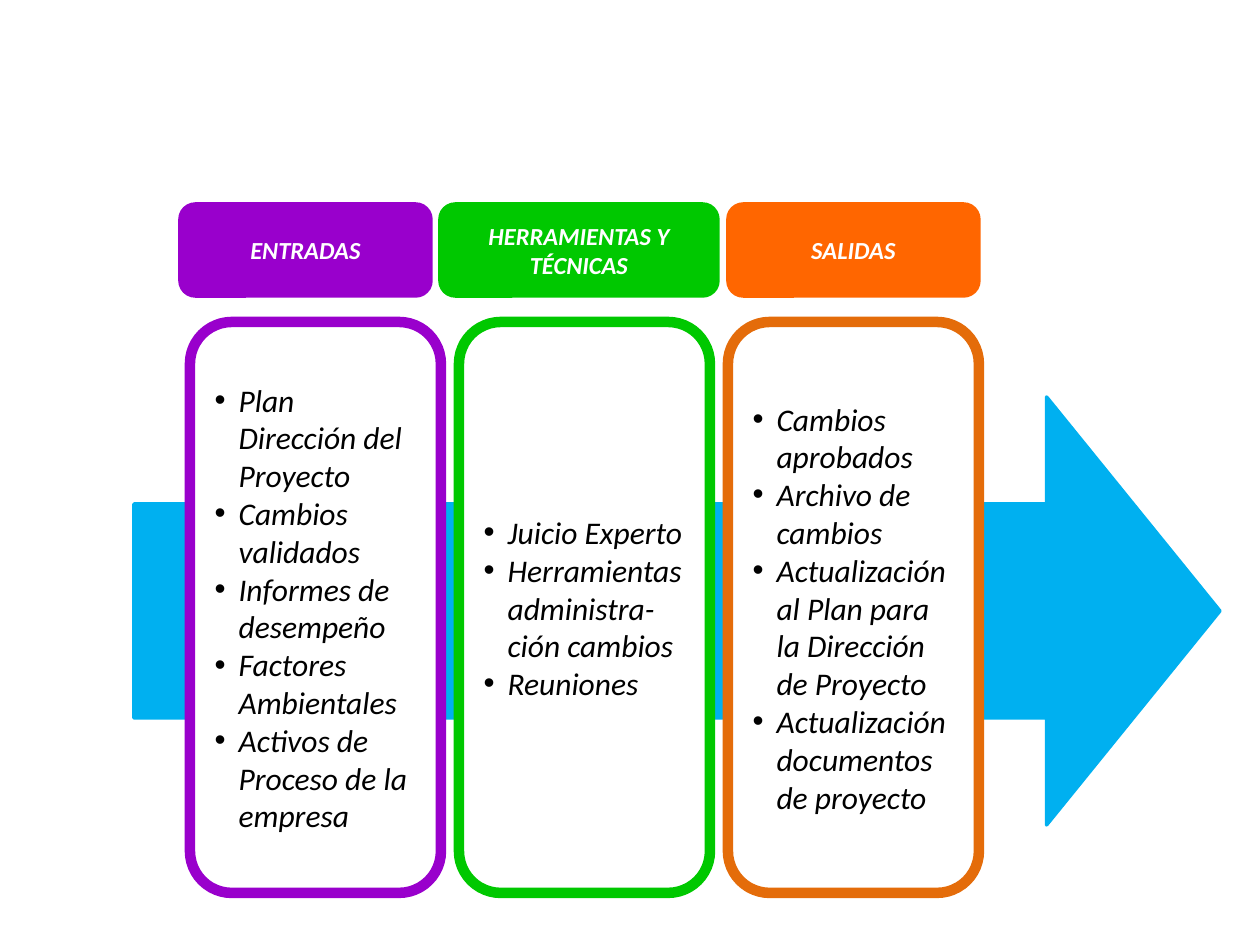
from lxml.etree import SubElement
from pptx import Presentation
from pptx.dml.color import RGBColor
from pptx.enum.shapes import MSO_SHAPE
from pptx.enum.text import MSO_ANCHOR, PP_ALIGN
from pptx.oxml.ns import qn
from pptx.util import Pt

EMU_PER_PX = 914400 // 126
BLUE, WHITE, BLACK = "00B0F0", "FFFFFF", "000000"
PURPLE, GREEN, ORANGE, DARK_ORANGE = "9900CC", "00C800", "FF6600", "E46C0A"

PANEL_LEFT, PANEL_TOP, PANEL_WIDTH, PANEL_HEIGHT = 190, 322, 251, 571
PANEL_PITCH = 269
HEADER_TOP, HEADER_HEIGHT = 204, 92

# heading, heading left, heading width, heading colour, panel colour, items
COLUMNS = [
    ("ENTRADAS", 180, 251, PURPLE, PURPLE, [
        "Plan Dirección del Proyecto",
        "Cambios validados",
        "Informes de desempeño",
        "Factores Ambientales",
        "Activos de Proceso de la empresa",
    ]),
    ("HERRAMIENTAS Y TÉCNICAS", 440, 278, GREEN, GREEN, [
        "Juicio Experto",
        "Herramientas administra-ción cambios",
        "Reuniones",
    ]),
    ("SALIDAS", 728, 251, ORANGE, DARK_ORANGE, [
        "Cambios aprobados",
        "Archivo de cambios",
        "Actualización al Plan para la Dirección de Proyecto",
        "Actualización documentos de proyecto",
    ]),
]


def px(length):
    return length * EMU_PER_PX


def color(value):
    return RGBColor.from_string(value)


def add_bullet(para, indent=24):
    properties = para._p.get_or_add_pPr()
    properties.set("marL", str(px(indent)))
    properties.set("indent", str(-px(indent)))
    SubElement(properties, qn("a:buFont")).set("typeface", "Arial")
    SubElement(properties, qn("a:buChar")).set("char", "•")


def write(para, text, size=18, fill=BLACK, bold=False, align=PP_ALIGN.LEFT):
    para.alignment = align
    span = para.add_run()
    span.text = text
    span.font.name = "Calibri"
    span.font.size = Pt(size)
    span.font.bold = bold
    span.font.italic = True
    span.font.color.rgb = color(fill)


class ProcessPage:
    """Shared shape style and the slide being drawn."""

    def __init__(self, page):
        self.page = page

    def shape(self, kind, left, top, width, height, fill, line, line_width=2):
        box = self.page.shapes.add_shape(
            kind, px(left), px(top), px(width), px(height))
        box.shadow.inherit = False
        box.fill.solid()
        box.fill.fore_color.rgb = color(fill)
        box.line.color.rgb = color(line)
        box.line.width = Pt(line_width)
        box.text_frame.word_wrap = True
        box.text_frame.vertical_anchor = MSO_ANCHOR.MIDDLE
        return box

    def arrow(self, left, top, width, height):
        arrow = self.shape(MSO_SHAPE.RIGHT_ARROW, left, top, width, height, BLUE, BLUE)
        arrow.adjustments[0] = 0.5
        arrow.adjustments[1] = 0.405

    def panel(self, left, outline, items):
        box = self.shape(MSO_SHAPE.ROUNDED_RECTANGLE, left, PANEL_TOP,
                         PANEL_WIDTH, PANEL_HEIGHT, WHITE, outline, line_width=6)
        frame = box.text_frame
        for index, item in enumerate(items):
            para = frame.add_paragraph() if index else frame.paragraphs[0]
            add_bullet(para)
            write(para, item)

    def header(self, left, width, fill, text):
        box = self.shape(MSO_SHAPE.ROUNDED_RECTANGLE, left, HEADER_TOP,
                         width, HEADER_HEIGHT, fill, fill)
        write(box.text_frame.paragraphs[0], text, size=14, fill=WHITE,
              bold=True, align=PP_ALIGN.CENTER)


def main():
    deck = Presentation()
    deck.slide_width, deck.slide_height = px(1260), px(945)
    blank_layout = deck.slide_layouts[6]
    process = ProcessPage(deck.slides.add_slide(blank_layout))
    process.arrow(134, 397, 1086, 428)
    for index, (heading, left, width, fill, outline, items) in enumerate(COLUMNS):
        process.panel(PANEL_LEFT + index * PANEL_PITCH, outline, items)
        process.header(left, width, fill, heading)
    deck.save("out.pptx")


if __name__ == "__main__":
    main()
